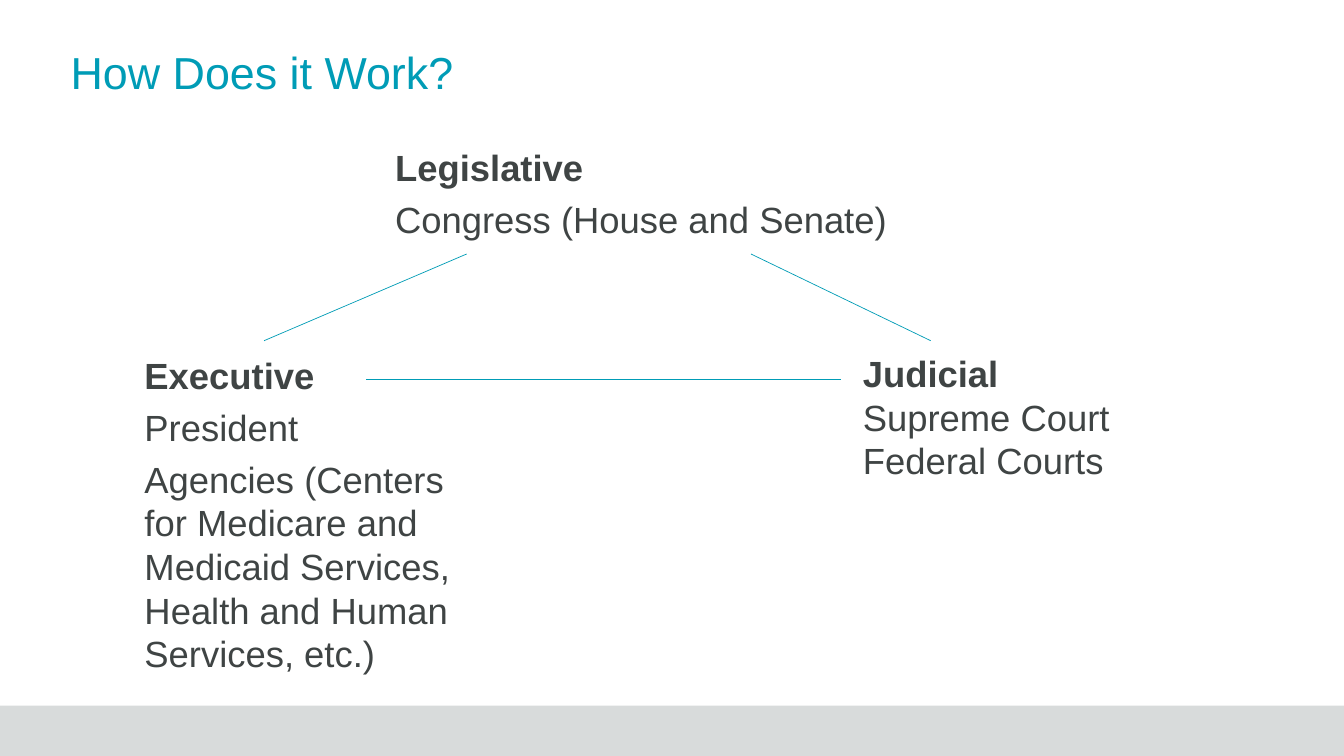
"""Build a slide on how the three branches of government connect."""
from dataclasses import dataclass

from lxml import etree
from pptx import Presentation
from pptx.dml.color import RGBColor
from pptx.enum.shapes import MSO_CONNECTOR, MSO_SHAPE
from pptx.enum.text import MSO_ANCHOR, MSO_AUTO_SIZE, PP_ALIGN
from pptx.oxml.ns import qn
from pptx.util import Inches, Pt

STRAIGHT = MSO_CONNECTOR.STRAIGHT
RECTANGLE = MSO_SHAPE.RECTANGLE
TOP = MSO_ANCHOR.TOP
NO_AUTOFIT = MSO_AUTO_SIZE.NONE
LEFT = PP_ALIGN.LEFT

WIDTH, HEIGHT = Inches(13.33), Inches(7.5)
COLUMNS, ROWS = 40, 30
TITLE_ONLY = 5


@dataclass(frozen=True)
class Theme:
    font: str = "Arial"
    accent: RGBColor = RGBColor(0x00, 0x9C, 0xB6)
    ink: RGBColor = RGBColor(0x3F, 0x44, 0x44)
    band: RGBColor = RGBColor(0xD8, 0xDB, 0xDB)
    title_size: float = 32
    branch_size: float = 26
    line_width: float = 0.5
    paragraph_gap: float = 6


THEME = Theme()


def on_grid(column, row):
    return round(WIDTH * column / COLUMNS), round(HEIGHT * row / ROWS)


def prepare_frame(frame):
    frame.word_wrap = True
    frame.auto_size = NO_AUTOFIT
    frame.vertical_anchor = TOP
    frame.margin_left = frame.margin_right = 0
    frame.margin_top = frame.margin_bottom = 0


def add_text(paragraph, text, size, color, bold=False):
    paragraph.alignment = LEFT
    run = paragraph.add_run()
    run.text = text
    run.font.name = THEME.font
    run.font.size = Pt(size)
    run.font.bold = bold
    run.font.color.rgb = color


def set_title(slide, text, position, extent):
    title = slide.shapes.title
    title.left, title.top = on_grid(*position)
    title.width, title.height = on_grid(*extent)
    prepare_frame(title.text_frame)
    heading = title.text_frame.paragraphs[0]
    heading.line_spacing = 0.9
    add_text(heading, text, THEME.title_size, THEME.accent)


def add_footer_band(slide, position, extent):
    band = slide.shapes.add_shape(RECTANGLE, *on_grid(*position), *on_grid(*extent))
    band.shadow.inherit = False
    band.fill.solid()
    band.fill.fore_color.rgb = THEME.band
    band.line.fill.background()


def add_branch(slide, name, bodies, position, extent, line_spacing=1.0):
    branch = slide.shapes.add_textbox(*on_grid(*position), *on_grid(*extent))
    frame = branch.text_frame
    prepare_frame(frame)
    for index, text in enumerate([name, *bodies]):
        paragraph = frame.add_paragraph() if index else frame.paragraphs[0]
        paragraph.line_spacing = line_spacing
        paragraph.space_after = Pt(THEME.paragraph_gap)
        add_text(paragraph, text, THEME.branch_size, THEME.ink, bold=index == 0)


def link_branches(slide, start, end):
    link = slide.shapes.add_connector(STRAIGHT, *on_grid(*start), *on_grid(*end))
    link.line.color.rgb = THEME.accent
    link.line.width = Pt(THEME.line_width)
    etree.SubElement(link._element.spPr, qn("a:effectLst"))


def main():
    deck = Presentation()
    deck.slide_width, deck.slide_height = WIDTH, HEIGHT
    slide = deck.slides.add_slide(deck.slide_layouts[TITLE_ONLY])

    add_footer_band(slide, (0, 28), (COLUMNS, 2))
    set_title(slide, "How Does it Work?", (2.1, 2), (33, 4))

    add_branch(slide, "Legislative", ["Congress (House and Senate)"],
               (11.76, 5.76), (15.4, 4.88))
    add_branch(slide, "Judicial", ["Supreme Court", "Federal Courts"],
               (25.68, 14.28), (8.22, 4.88), line_spacing=0.8)
    add_branch(slide, "Executive",
               ["President",
                "Agencies (Centers for Medicare and Medicaid Services, "
                "Health and Human Services, etc.)"],
               (4.3, 14), (10.02, 4.88))

    link_branches(slide, (13.89, 10.08), (7.86, 13.52))
    link_branches(slide, (27.7, 13.52), (22.35, 10.08))
    link_branches(slide, (25.02, 15.04), (10.89, 15.04))

    deck.save("out.pptx")


if __name__ == "__main__":
    main()
